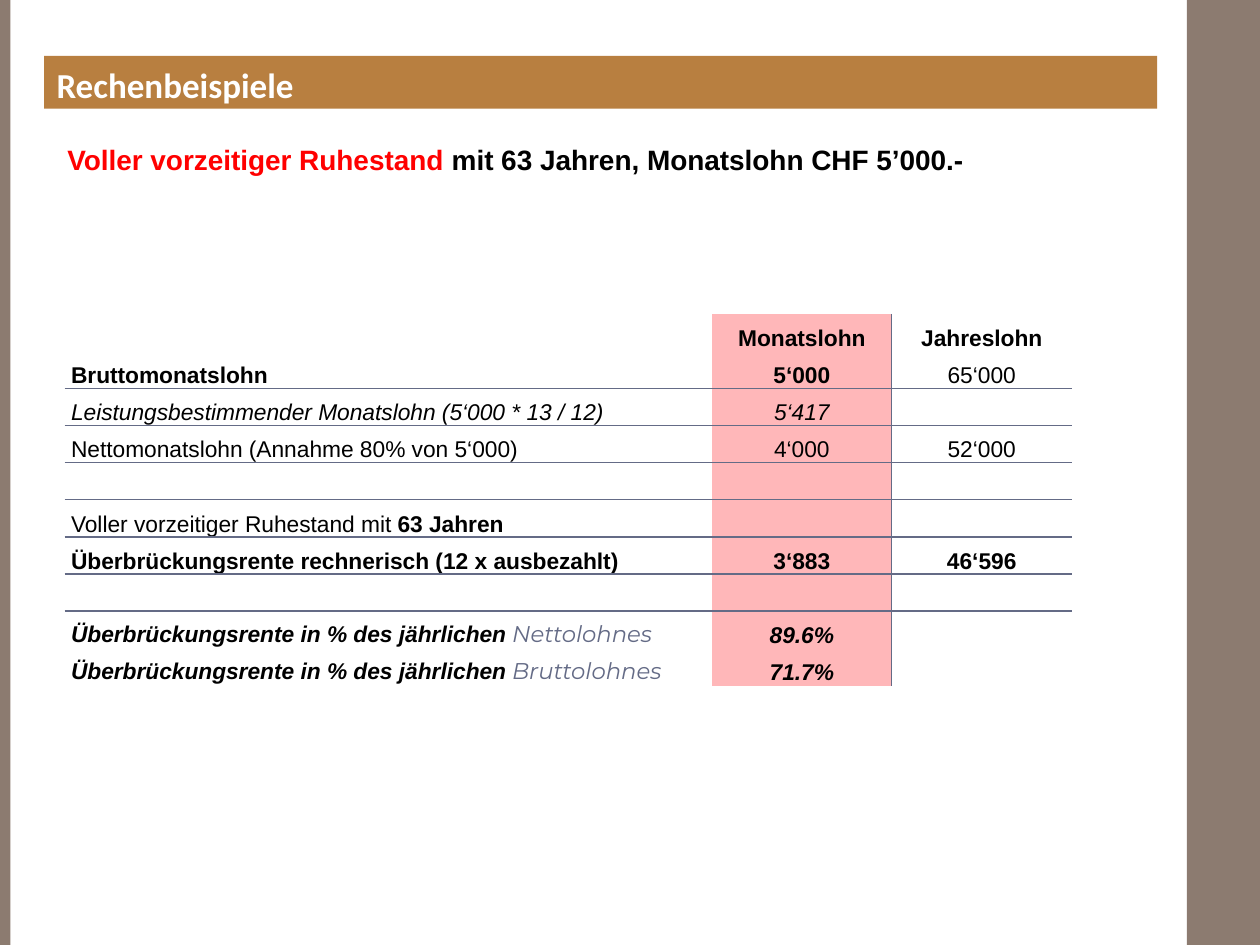
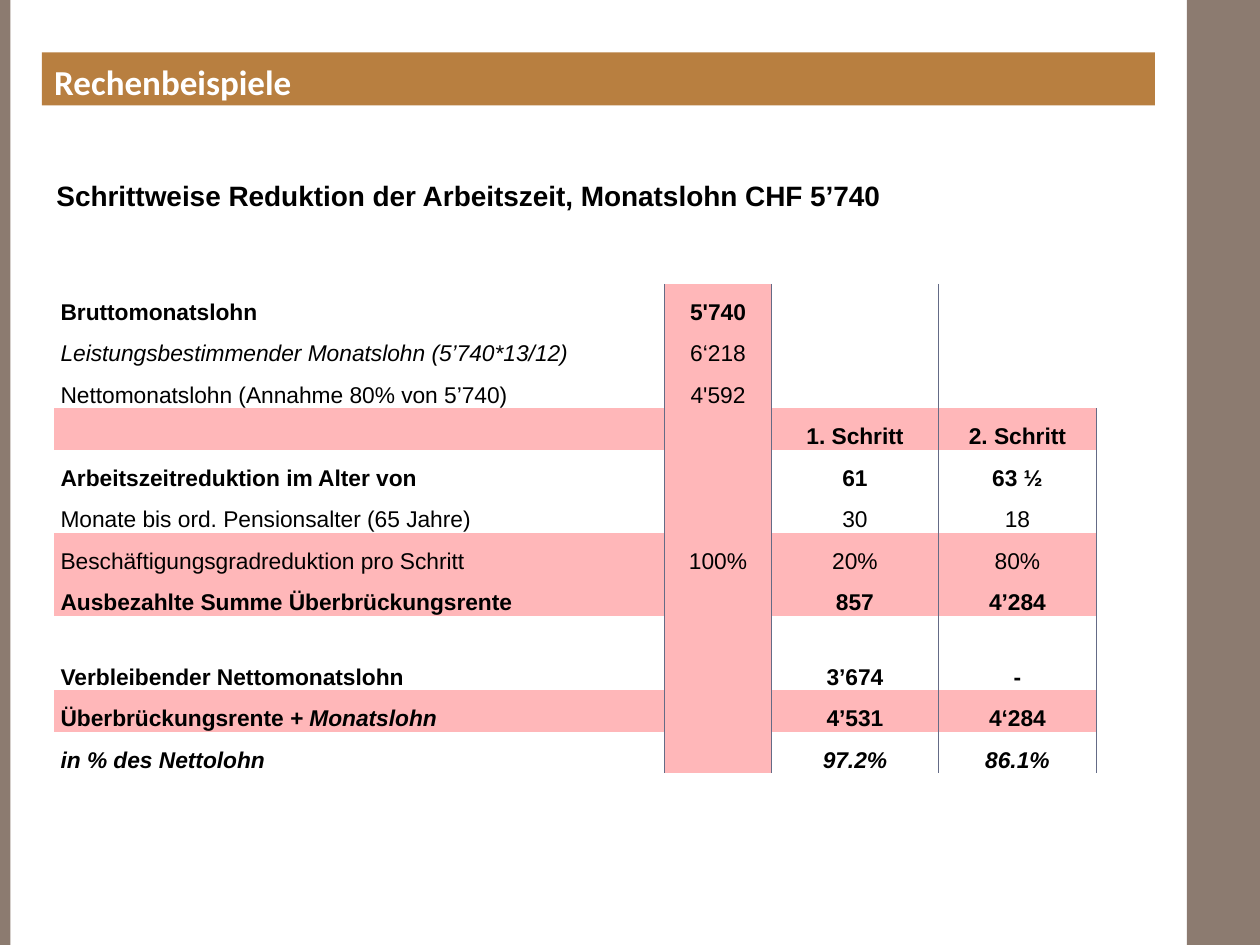
"""Build two slides with worked examples for bridging pensions."""
import lxml.etree
import pptx
import pptx.dml.color
import pptx.enum.shapes
import pptx.enum.text
import pptx.oxml.ns
import pptx.util

Pt = pptx.util.Pt
RGB = pptx.dml.color.RGBColor.from_string
ALIGN = pptx.enum.text.PP_ALIGN
ANCHOR = pptx.enum.text.MSO_ANCHOR

THEME = {
    "side": "8C7B70", "band": "B87F40", "pink": "FFB7B9", "rule": "646B86",
    "title_size": 20, "subtitle_size": 16, "cell_size": 13, "rule_width": 1,
    "no_grid": "{2D5ABB26-0587-4C30-8999-92F81FD0307C}",
}
STYLES = {
    "title": ("Calibri", "FFFFFF", True, False),
    "plain": ("Arial", "000000", False, False),
    "bold": ("Arial", "000000", True, False),
    "italic": ("Arial", "000000", False, True),
    "strong": ("Arial", "000000", True, True),
    "alert": ("Arial", "FF0000", True, False),
    "accent": ("Montserrat", "646B86", False, True),
}


def plain(text):
    return [(text, "plain")]


def bold(text):
    return [(text, "bold")]


def italic(text):
    return [(text, "italic")]


def strong(text):
    return [(text, "strong")]


TITLE = "Rechenbeispiele"
SIDE_BARS = [(678.2, 41.8), (0, 6)]
SLIDES = [
    {
        "band": (25.2, 31.9),
        "subtitle": [("Voller vorzeitiger Ruhestand ", "alert"),
                     ("mit 63 Jahren, Monatslohn CHF 5’000.-", "bold")],
        "subtitle_at": (31.4, 77.8),
        "table_at": (37, 179.4),
        "cols": [369.8, 102.8, 102.8],
        "row_height": 21.25, "tall_rows": {},
        "pink_rows": set(),
        "verticals": {2: 0},
        "horizontals": {2, 4, 6, 7},
        "rows": [
            [[], bold("Monatslohn"), bold("Jahreslohn")],
            [bold("Bruttomonatslohn"), bold("5‘000"), plain("65‘000")],
            [italic("Leistungsbestimmender Monatslohn (5‘000 * 13 / 12)"), italic("5‘417"), []],
            [plain("Nettomonatslohn (Annahme 80% von 5‘000)"), plain("4‘000"), plain("52‘000")],
            [[], [], []],
            [plain("Voller vorzeitiger Ruhestand mit ") + bold("63 Jahren"), [], []],
            [bold("Überbrückungsrente rechnerisch (12 x ausbezahlt)"), bold("3‘883"), bold("46‘596")],
            [[], [], []],
            [strong("Überbrückungsrente in % des jährlichen ") + [("Nettolohnes", "accent")],
             strong("89.6%"), []],
            [strong("Überbrückungsrente in % des jährlichen ") + [("Bruttolohnes", "accent")],
             strong("71.7%"), []],
        ],
    },
    {
        "band": (23.9, 30),
        "subtitle": bold("Schrittweise Reduktion der Arbeitszeit, Monatslohn CHF 5’740"),
        "subtitle_at": (25.2, 98.6),
        "table_at": (31, 162.2),
        "cols": [348.8, 61, 95.5, 90.2],
        "row_height": 23.72, "tall_rows": {8: 42.6},
        "pink_rows": {3, 6, 7, 9},
        "verticals": {1: 0, 2: 0, 3: 3, 4: 3},
        "horizontals": set(),
        "rows": [
            [bold("Bruttomonatslohn"), bold("5'740"), [], []],
            [italic("Leistungsbestimmender Monatslohn (5’740*13/12)"), plain("6‘218"), [], []],
            [plain("Nettomonatslohn (Annahme 80% von 5’740)"), plain("4'592"), [], []],
            [[], [], bold("1. Schritt"), bold("2. Schritt")],
            [bold("Arbeitszeitreduktion im Alter von"), [], bold("61"), bold("63 ½")],
            [plain("Monate bis ord. Pensionsalter (65 Jahre)"), [], plain("30"), plain("18")],
            [plain("Beschäftigungsgradreduktion pro Schritt"), plain("100%"), plain("20%"), plain("80%")],
            [bold("Ausbezahlte Summe Überbrückungsrente"), [], bold("857"), bold("4’284")],
            [bold("Verbleibender Nettomonatslohn"), [], bold("3’674"), bold("-")],
            [bold("Überbrückungsrente ") + strong("+ Monatslohn"), [], bold("4’531"), bold("4‘284")],
            [strong("in % des Nettolohn"), [], strong("97.2%"), strong("86.1%")],
        ],
    },
]


def set_font(font, style):
    font.name, color, font.bold, font.italic = STYLES[style]
    font.color.rgb = RGB(color)


def write(p, runs, size, align=ALIGN.LEFT):
    p.alignment = align
    p.font.size = Pt(size)
    for text, style in runs:
        r = p.add_run()
        r.text = text
        set_font(p.font if len(runs) == 1 else r.font, style)


def add_bar(s, left, top, width, height, color):
    sp = s.shapes.add_shape(pptx.enum.shapes.MSO_SHAPE.RECTANGLE,
                            Pt(left), Pt(top), Pt(width), Pt(height))
    sp.shadow.inherit = False
    sp.fill.solid()
    sp.fill.fore_color.rgb = RGB(color)
    sp.line.fill.background()
    return sp


def add_band(s, left, top):
    tf = add_bar(s, left, top, 636, 30.2, THEME["band"]).text_frame
    tf.vertical_anchor = ANCHOR.TOP
    tf.margin_top = Pt(4.5)
    write(tf.paragraphs[0], [(TITLE, "title")], THEME["title_size"])


def add_subtitle(s, runs, left, top):
    tf = s.shapes.add_textbox(Pt(left), Pt(top), Pt(623.5), Pt(26.6)).text_frame
    tf.word_wrap = True
    write(tf.paragraphs[0], runs, THEME["subtitle_size"])


def add_border(cell, side):
    qn = pptx.oxml.ns.qn
    ln = lxml.etree.SubElement(cell._tc.get_or_add_tcPr(), qn("a:ln" + side),
                               w=str(Pt(THEME["rule_width"])))
    fill = lxml.etree.SubElement(ln, qn("a:solidFill"))
    lxml.etree.SubElement(fill, qn("a:srgbClr"), val=THEME["rule"])


def format_cell(cell, spec_, row, col):
    def upright(edge):
        return row >= spec_["verticals"].get(edge, len(spec_["rows"]))

    edges = {"L": upright(col), "R": upright(col + 1),
             "T": row in spec_["horizontals"], "B": row + 1 in spec_["horizontals"]}
    for side, drawn in edges.items():
        if drawn:
            add_border(cell, side)
    if col == 1 or row in spec_["pink_rows"]:
        cell.fill.solid()
        cell.fill.fore_color.rgb = RGB(THEME["pink"])
    else:
        cell.fill.background()
    cell.vertical_anchor = ANCHOR.BOTTOM
    cell.margin_left = cell.margin_right = Pt(3.6)
    cell.margin_top = cell.margin_bottom = 0


def add_pay_table(s, data):
    rows, cols = data["rows"], data["cols"]
    heights = [data["tall_rows"].get(i, data["row_height"]) for i in range(len(rows))]
    left, top = data["table_at"]
    table = s.shapes.add_table(len(rows), len(cols), Pt(left), Pt(top),
                               Pt(sum(cols)), Pt(sum(heights))).table
    table._tbl.tblPr.find(pptx.oxml.ns.qn("a:tableStyleId")).text = THEME["no_grid"]
    table.first_row = table.horz_banding = False
    for column, width in zip(table.columns, cols):
        column.width = Pt(width)
    for i, row in enumerate(rows):
        table.rows[i].height = Pt(heights[i])
        for j, runs in enumerate(row):
            cell = table.cell(i, j)
            format_cell(cell, data, i, j)
            p = cell.text_frame.paragraphs[0]
            p.line_spacing = Pt(THEME["cell_size"])
            write(p, runs, THEME["cell_size"], ALIGN.CENTER if j else ALIGN.LEFT)


def main():
    prs = pptx.Presentation()
    prs.slide_width, prs.slide_height = Pt(720), Pt(540)
    for data in SLIDES:
        s = prs.slides.add_slide(prs.slide_layouts[6])
        for left, width in SIDE_BARS:
            add_bar(s, left, 0, width, 540, THEME["side"])
        add_subtitle(s, data["subtitle"], *data["subtitle_at"])
        add_pay_table(s, data)
        add_band(s, *data["band"])
    prs.save("out.pptx")


if __name__ == "__main__":
    main()
